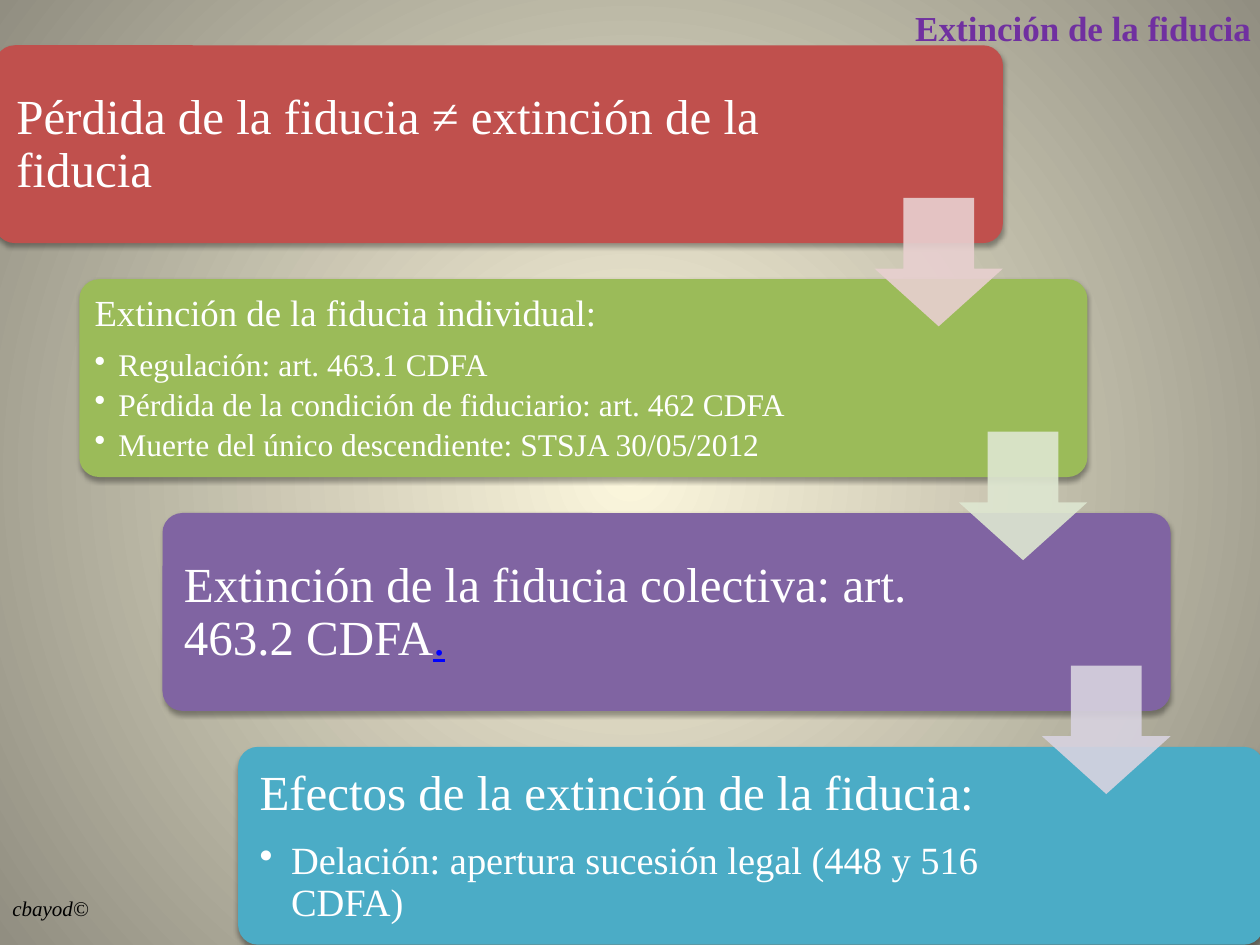
"""Build the slide on how the fiducia ends, as four stepped boxes joined by arrows."""
from lxml import etree
from pptx import Presentation
from pptx import util as u
from pptx.dml.color import RGBColor
from pptx.enum import shapes, text
from pptx.oxml import ns

FONT = "Times New Roman"


def color(value):
    return RGBColor.from_string(value)


def add_run(p, words, size, value="FFFFFF"):
    r = p.add_run()
    r.text = words
    r.font.name = FONT
    r.font.size = u.Pt(size)
    r.font.color.rgb = color(value)
    return r


prs = Presentation()
prs.slide_width, prs.slide_height = u.Inches(10), u.Inches(7.5)
s = prs.slides.add_slide(prs.slide_layouts[6])

bg = s.background.fill
bg.gradient()
for stop, value in zip(bg.gradient_stops, ("FCF7DD", "918E81")):
    stop.color.rgb = color(value)
lin = next(s._element.iter(ns.qn("a:lin")))
radial = etree.Element(ns.qn("a:path"), {"path": "circle"})
etree.SubElement(radial, ns.qn("a:fillToRect"), dict.fromkeys("ltrb", "50000"))
lin.getparent().replace(lin, radial)

tf = s.shapes.add_textbox(u.Inches(0), u.Inches(7.06), u.Inches(0.83), u.Inches(0.3)).text_frame
tf.word_wrap = False
add_run(tf.paragraphs[0], "cbayod©", 12, "000000").font.italic = True

tf = s.shapes.add_textbox(u.Inches(0.03), u.Inches(0), u.Inches(10), u.Inches(0.44)).text_frame
tf.word_wrap = True
p = tf.paragraphs[0]
p.alignment = text.PP_ALIGN.RIGHT
add_run(p, "Extinción de la fiducia", 20, "7030A0").font.bold = True

steps = [
    (-0.04, 8, 6.17, "C0504D", 0.12, 28, "Pérdida de la fiducia ≠ extinción de la fiducia", 18, []),
    (0.63, 8, 6.22, "9BBB59", 0.07, 21, "Extinción de la fiducia individual:", 18,
     ["Regulación: art. 463.1 CDFA",
      "Pérdida de la condición de fiduciario: art. 462 CDFA",
      "Muerte del único descendiente: STSJA 30/05/2012"]),
    (1.29, 8, 6.23, "8064A2", 0.12, 28, "Extinción de la fiducia colectiva: art. 463.2 CDFA", 18, []),
    (1.89, 8.14, 6.33, "4BACC6", 0.12, 28, "Efectos de la extinción de la fiducia:", 22,
     ["Delación: apertura sucesión legal (448 y 516 CDFA)"]),
]
top, pitch, height = 0.36, 1.856, 1.57

for i, (left, width, text_width, fill, inset, size, heading, item_size, items) in enumerate(steps):
    y = top + i * pitch
    sp = s.shapes.add_shape(shapes.MSO_SHAPE.ROUNDED_RECTANGLE, u.Inches(left), u.Inches(y),
                            u.Inches(width), u.Inches(height))
    sp.adjustments[0] = 0.1
    sp.fill.solid()
    sp.fill.fore_color.rgb = color(fill)
    sp.line.fill.background()
    sp.shadow.inherit = False
    effects = sp._element.spPr.find(ns.qn("a:effectLst"))
    shadow = etree.SubElement(effects, ns.qn("a:outerShdw"), {
        "blurRad": str(u.Pt(3.1)), "dist": str(u.Pt(1.8)), "dir": "5400000", "rotWithShape": "0"})
    black = etree.SubElement(shadow, ns.qn("a:srgbClr"), val="000000")
    etree.SubElement(black, ns.qn("a:alpha"), val="35000")

    tf = s.shapes.add_textbox(u.Inches(left + 0.05), u.Inches(y + 0.05),
                              u.Inches(text_width), u.Inches(1.48)).text_frame
    tf.word_wrap = True
    tf.vertical_anchor = text.MSO_ANCHOR.MIDDLE
    tf.margin_left = tf.margin_right = tf.margin_top = tf.margin_bottom = u.Inches(inset)
    p = tf.paragraphs[0]
    p.line_spacing = 0.9
    p.space_after = u.Pt(size * 0.42)
    add_run(p, heading, size)
    if i == 2:
        add_run(p, ".", size, "0000FF").font.underline = True
    for item in items:
        p = tf.add_paragraph()
        p.level = 1
        p.line_spacing = 0.9
        p.space_after = u.Pt(item_size * 0.18)
        indent = u.Inches(0.19 if item_size == 18 else 0.25)
        pPr = p._p.get_or_add_pPr()
        pPr.set("marL", str(indent))
        pPr.set("indent", str(-indent))
        etree.SubElement(pPr, ns.qn("a:buChar"), char="•")
        add_run(p, item, item_size)

for i, (left, fill) in enumerate([(6.94, "E8D0D0"), (7.61, "DEE7D1"), (8.27, "D8D3E0")]):
    sp = s.shapes.add_shape(shapes.MSO_SHAPE.DOWN_ARROW, u.Inches(left), u.Inches(1.57 + i * pitch),
                            u.Inches(1.02), u.Inches(1.02))
    sp.adjustments[0], sp.adjustments[1] = 0.55, 0.45
    sp.fill.solid()
    sp.fill.fore_color.rgb = color(fill)
    tint = sp._element.spPr.find(".//" + ns.qn("a:srgbClr"))
    etree.SubElement(tint, ns.qn("a:alpha"), val="90000")
    sp.line.fill.background()
    sp.shadow.inherit = False

prs.save("out.pptx")
